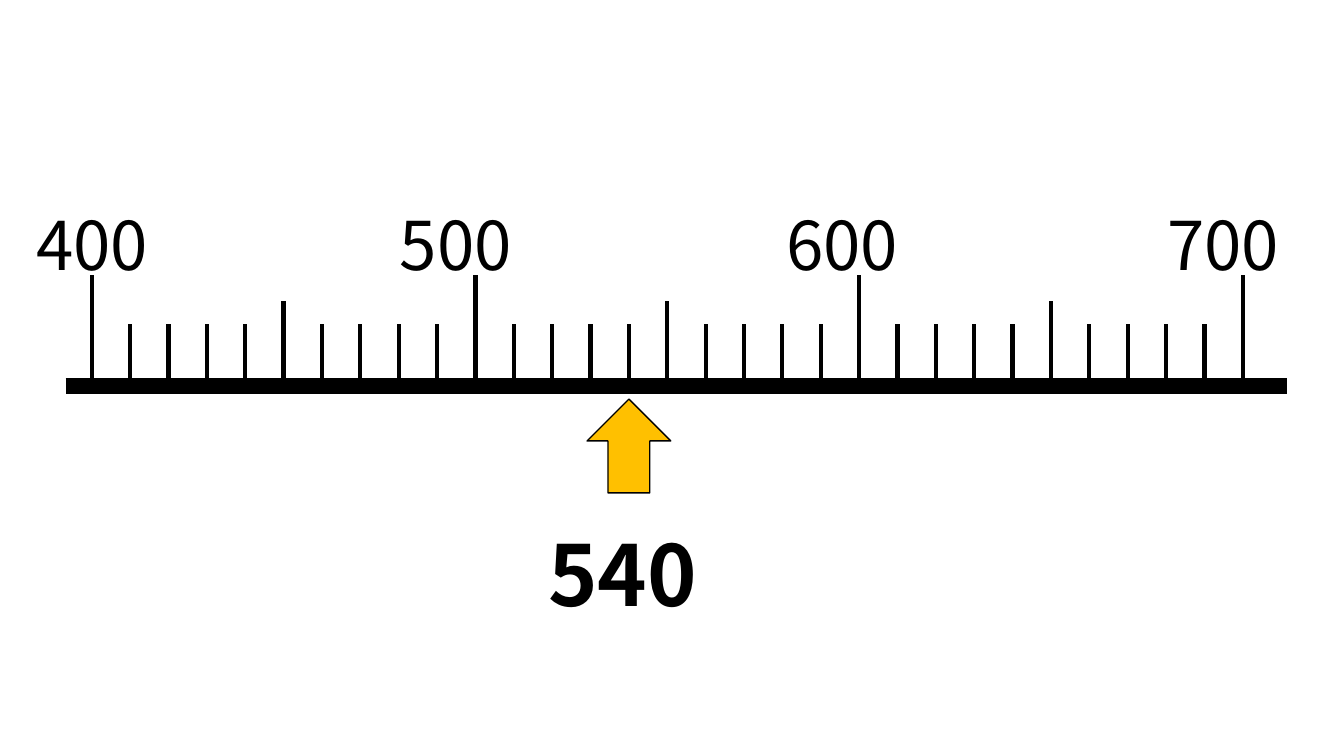
from lxml.etree import SubElement
from pptx import Presentation
from pptx.dml.color import RGBColor
from pptx.enum.shapes import MSO_CONNECTOR as Connector, MSO_SHAPE as Shape
from pptx.enum.text import MSO_AUTO_SIZE as AutoSize
from pptx.oxml.ns import qn
from pptx.util import Pt

BLACK = RGBColor(0x00, 0x00, 0x00)
AMBER = RGBColor(0xFF, 0xC0, 0x00)

AXIS_Y = 275.76
FIRST_X, LAST_X = 65.52, 887.76
START, END, STEP = 400, 700, 10
LABEL_LEFTS = {400: 18.72, 500: 278.64, 600: 554.4, 700: 826.56}
ANSWER = 540


class NumberLineSlide:
    font_name = "Noto Sans CJK JP"

    def __init__(self, slide):
        self.shapes = slide.shapes

    def line(self, x1, y1, x2, y2, weight):
        line = self.shapes.add_connector(
            Connector.STRAIGHT, Pt(x1), Pt(y1), Pt(x2), Pt(y2))
        line.line.color.rgb = BLACK
        line.line.width = Pt(weight)
        SubElement(line._element.spPr, qn("a:effectLst"))

    def label(self, text, left, top, width, height, size, bold=False):
        box = self.shapes.add_textbox(Pt(left), Pt(top), Pt(width), Pt(height))
        frame = box.text_frame
        frame.word_wrap = True
        frame.auto_size = AutoSize.SHAPE_TO_FIT_TEXT
        paragraph = frame.paragraphs[0]
        paragraph.text = text
        paragraph.font.name = self.font_name
        paragraph.font.size = Pt(size)
        paragraph.font.bold = bold
        paragraph.font.color.rgb = BLACK

    def pointer(self, center, top, width, height):
        arrow = self.shapes.add_shape(
            Shape.UP_ARROW, Pt(center - width / 2), Pt(top), Pt(width), Pt(height))
        arrow.shadow.inherit = False
        arrow.fill.solid()
        arrow.fill.fore_color.rgb = AMBER
        arrow.line.color.rgb = BLACK
        arrow.line.width = Pt(1)


def value_x(value):
    return FIRST_X + (LAST_X - FIRST_X) * (value - START) / (END - START)


def tick_top(value):
    if value % 100 == 0:
        return 196.56
    return 215.28 if value % 50 == 0 else 231.12


def main():
    presentation = Presentation()
    presentation.slide_width, presentation.slide_height = Pt(960), Pt(540)
    blank_layout = presentation.slide_layouts[6]
    number_line = NumberLineSlide(presentation.slides.add_slide(blank_layout))

    number_line.line(46.8, AXIS_Y, 919.44, AXIS_Y, 12)
    for value in range(START, END + STEP, STEP):
        x = value_x(value)
        number_line.line(x, AXIS_Y, x, tick_top(value), 3)
    for value, left in LABEL_LEFTS.items():
        number_line.label(str(value), left, 141.84, 105.12, 65.52, 48)

    number_line.pointer(value_x(ANSWER), 285.12, 59.76, 66.96)
    number_line.label(str(ANSWER), 384.48, 369.36, 150.48, 79.92, 60, bold=True)

    presentation.save("out.pptx")


if __name__ == "__main__":
    main()
